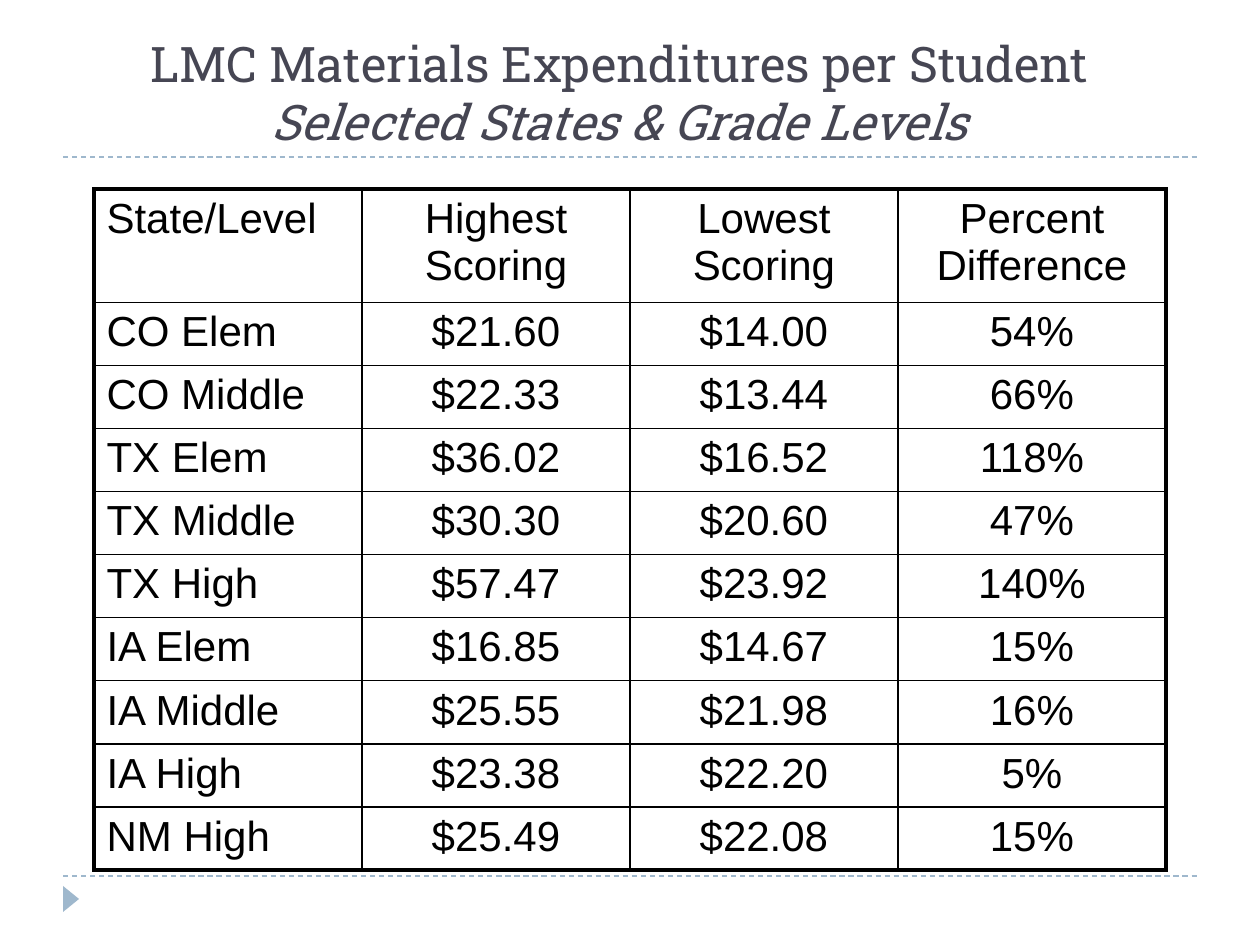
from lxml.etree import SubElement as Sub
from pptx import Presentation
from pptx.dml.color import RGBColor as RGB
from pptx.enum.dml import MSO_LINE as Dash
from pptx.enum.shapes import MSO_CONNECTOR as Link, MSO_SHAPE as Shape
from pptx.enum.text import MSO_ANCHOR as Anchor, PP_ALIGN as Align
from pptx.oxml.ns import qn
from pptx.util import Emu, Pt

SCALE = 914400 / 126
INK = {"title": "464653", "text": "000000", "accent": "9FB8CD"}
THIN, THICK = 1, 2.25

HEAD = ["State/Level", "Highest Scoring", "Lowest Scoring", "Percent Difference"]
ROWS = [
    ["CO Elem", "$21.60", "$14.00", "54%"],
    ["CO Middle", "$22.33", "$13.44", "66%"],
    ["TX Elem", "$36.02", "$16.52", "118%"],
    ["TX Middle", "$30.30", "$20.60", "47%"],
    ["TX High", "$57.47", "$23.92", "140%"],
    ["IA Elem", "$16.85", "$14.67", "15%"],
    ["IA Middle", "$25.55", "$21.98", "16%"],
    ["IA High", "$23.38", "$22.20", "5%"],
    ["NM High", "$25.49", "$22.08", "15%"],
]


def px(*nums):
    return [Emu(round(n * SCALE)) for n in nums]


def tint(name):
    return RGB.from_string(INK[name])


class Page:
    def __init__(self, deck):
        self.slide = deck.slides.add_slide(deck.slide_layouts[6])
        self.shapes = self.slide.shapes

    def rule(self, left, right, y):
        line = self.shapes.add_connector(Link.STRAIGHT, *px(left, y, right, y))
        line.line.color.rgb = tint("accent")
        line.line.width = Pt(0.75)
        line.line.dash_style = Dash.DASH
        Sub(line._element.spPr, qn("a:effectLst"))

    def mark(self, *box):
        """Draw a triangle that points right; box is its place before the turn."""
        mark = self.shapes.add_shape(Shape.ISOSCELES_TRIANGLE, *px(*box))
        mark.rotation = 90
        mark.shadow.inherit = False
        mark.fill.solid()
        mark.fill.fore_color.rgb = tint("accent")
        mark.line.fill.background()

    def run(self, para, text, font, size, ink, slant=None):
        run = para.add_run()
        run.text = text
        run.font.name = font
        run.font.size = Pt(size)
        run.font.italic = slant
        run.font.color.rgb = tint(ink)

    def title(self, box, first, second):
        frame = self.shapes.add_textbox(*px(*box)).text_frame
        frame.word_wrap = True
        frame.vertical_anchor = Anchor.BOTTOM
        para = frame.paragraphs[0]
        para.alignment = Align.CENTER
        self.run(para, first, "Roboto Slab", 28, "title")
        para.add_line_break()
        self.run(para, second, "Roboto Slab", 28, "title", True)

    def edge(self, cell, side, width):
        line = Sub(cell._tc.get_or_add_tcPr(), qn(f"a:ln{side}"), w=str(Pt(width)))
        fill = Sub(line, qn("a:solidFill"))
        Sub(fill, qn("a:srgbClr"), val=INK["text"])

    def table(self, left, top, wide, heights, data):
        """Fill a grid of equal columns with a thick outer frame."""
        rows, cols = len(data), len(data[0])
        box = px(left, top, wide * cols, sum(heights))
        grid = self.shapes.add_table(rows, cols, *box).table
        grid.first_row = grid.horz_banding = False
        for col in grid.columns:
            col.width = px(wide)[0]
        for r, (tall, texts) in enumerate(zip(heights, data)):
            grid.rows[r].height = px(tall)[0]
            for c, text in enumerate(texts):
                cell = grid.cell(r, c)
                outer = {"L": c == 0, "R": c == cols - 1,
                         "T": r == 0, "B": r == rows - 1}
                for side, thick in outer.items():
                    self.edge(cell, side, THICK if thick else THIN)
                cell.fill.background()
                para = cell.text_frame.paragraphs[0]
                para.alignment = Align.CENTER if c else Align.LEFT
                self.run(para, text, "Arial", 24, "text")


def main():
    deck = Presentation()
    deck.slide_width, deck.slide_height = px(1260, 945)
    page = Page(deck)
    for y in (876, 157):
        page.rule(63, 1197, y)
    page.mark(58, 891, 26, 16)
    page.title((84, 0, 1071, 157), "LMC Materials Expenditures per Student",
               "Selected States & Grade Levels")
    page.table(94, 189, 268, [111] + [62] * len(ROWS), [HEAD] + ROWS)
    deck.save("out.pptx")


if __name__ == "__main__":
    main()
